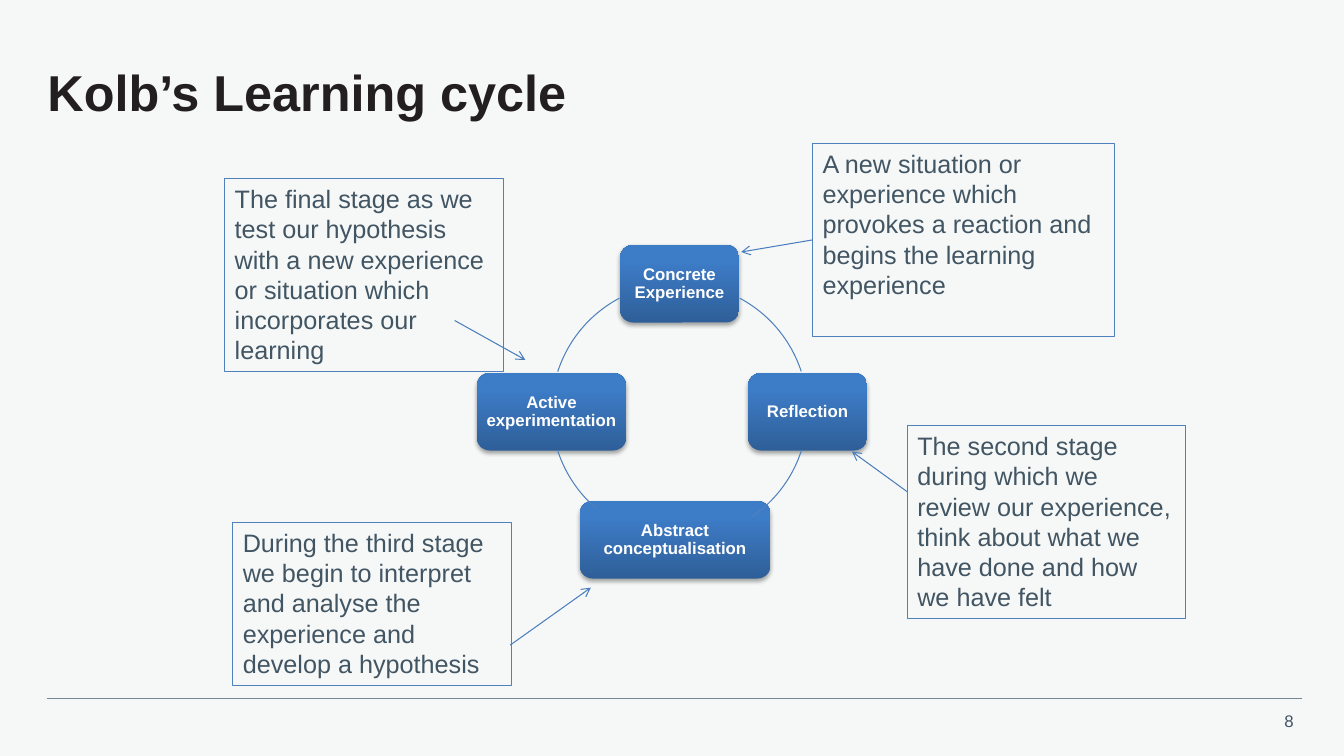
from lxml.etree import SubElement
from pptx import Presentation
from pptx.dml.color import RGBColor
from pptx.enum.shapes import MSO_CONNECTOR, MSO_SHAPE
from pptx.enum.text import MSO_ANCHOR, MSO_AUTO_SIZE, PP_ALIGN
from pptx.oxml.ns import qn
from pptx.util import Inches, Pt

COLORS = {
    "background": "F6F8F8", "title": "231F20", "body": "425563",
    "rule": "768692", "outline": "4F81BD", "arrow": "4B7EBC",
    "stage_dark": "2F5F99", "stage_light": "3D7CC7",
    "white": "FFFFFF", "shadow": "000000",
}

STAGES = [
    ("Concrete Experience", (6.15, 2.43, 1.18, 0.77)),
    ("Reflection", (7.42, 3.7, 1.18, 0.77)),
    ("Abstract conceptualisation", (5.75, 4.97, 1.89, 0.77)),
    ("Active experimentation", (4.73, 3.7, 1.48, 0.77)),
]
ARC_ANGLES = [(298.1, 341.9), (17.8, 55.4), (130.4, 162.3), (198, 242)]

NOTES = [
    ("A new situation or experience which provokes a reaction and begins "
     "the learning experience",
     (8.06, 1.42, 2.99, 1.92), (8.06, 2.38, 7.35, 2.5)),
    ("The final stage as we test our hypothesis with a new experience or "
     "situation which incorporates our learning",
     (2.23, 1.77, 2.76, 1.92), (4.51, 3.18, 5.21, 3.57)),
    ("The second stage during which we review our experience, think about "
     "what we have done and how we have felt",
     (9, 4.22, 2.76, 1.92), (9, 4.88, 8.45, 4.48)),
    ("During the third stage we begin to interpret and analyse the "
     "experience and develop a hypothesis",
     (2.31, 5.18, 2.76, 1.62), (5.06, 6.4, 5.86, 5.83)),
]


def color(name):
    """Return the named palette colour."""
    return RGBColor.from_string(COLORS[name])


def inches(values):
    """Convert numbers to lengths."""
    return [Inches(value) for value in values]


def write(shape, text, size, ink, bold=False, align=PP_ALIGN.LEFT,
          anchor=MSO_ANCHOR.TOP, spacing=1.0, insets=(0.1, 0.05), wrap=True):
    """Put formatted text in a shape."""
    frame = shape.text_frame
    frame.auto_size = MSO_AUTO_SIZE.NONE
    frame.word_wrap = wrap
    frame.vertical_anchor = anchor
    frame.margin_left = frame.margin_right = Inches(insets[0])
    frame.margin_top = frame.margin_bottom = Inches(insets[1])
    para = frame.paragraphs[0]
    para.alignment = align
    para.line_spacing = spacing
    span = para.add_run()
    span.text = text
    span.font.name = "Arial"
    span.font.size = Pt(size)
    span.font.bold = bold
    span.font.color.rgb = color(ink)


def add_line(page, ends, ink, width, arrow=False):
    """Draw a straight line, with an open arrowhead if asked."""
    line = page.shapes.add_connector(MSO_CONNECTOR.STRAIGHT, *inches(ends))
    line.line.color.rgb = color(ink)
    line.line.width = Pt(width)
    if arrow:
        SubElement(line.line._get_or_add_ln(), qn("a:tailEnd"), type="arrow")
    SubElement(line._element.spPr, qn("a:effectLst"))


def add_stage(page, name, box):
    """Draw one raised stage of the cycle."""
    stage = page.shapes.add_shape(MSO_SHAPE.ROUNDED_RECTANGLE, *inches(box))
    stage.fill.gradient()
    stage.fill.gradient_angle = 90
    stops = stage.fill.gradient_stops
    for stop, position, ink in zip(stops, (0, 0.8), ("stage_dark", "stage_light")):
        stop.position = position
        stop.color.rgb = color(ink)
    stage.line.fill.background()
    stage.shadow.inherit = False
    effects = stage._element.spPr.find(qn("a:effectLst"))
    shadow = SubElement(effects, qn("a:outerShdw"), blurRad="40000",
                        dist="23000", dir="5400000", rotWithShape="0")
    tint = SubElement(shadow, qn("a:srgbClr"), val=COLORS["shadow"])
    SubElement(tint, qn("a:alpha"), val="35000")
    write(stage, name, 12, "white", bold=True, align=PP_ALIGN.CENTER,
          anchor=MSO_ANCHOR.MIDDLE, spacing=0.9, insets=(0.04, 0.05))


def add_cycle(page, box):
    """Draw the four stages and the arcs of the circle in the box."""
    for name, stage_box in STAGES:
        add_stage(page, name, stage_box)
    for angles in ARC_ANGLES:
        arc = page.shapes.add_shape(MSO_SHAPE.ARC, *inches(box))
        for index, degrees in enumerate(angles):
            arc.adjustments[index] = degrees * 0.6
        arc.fill.background()
        arc.line.color.rgb = color("outline")
        arc.line.width = Pt(0.75)
        arc.shadow.inherit = False


def add_note(page, text, box, pointer):
    """Draw an outlined explanation and its arrow."""
    note = page.shapes.add_shape(MSO_SHAPE.RECTANGLE, *inches(box))
    note.fill.background()
    note.line.color.rgb = color("outline")
    note.line.width = Pt(0.75)
    note.shadow.inherit = False
    write(note, text, 18, "body")
    add_line(page, pointer, "arrow", 0.75, arrow=True)


def add_title(page, text, box):
    """Place the title in its placeholder."""
    title = page.shapes.title
    title.left, title.top, title.width, title.height = inches(box)
    write(title, text, 36, "title", bold=True, anchor=MSO_ANCHOR.MIDDLE,
          spacing=0.9, insets=(0, 0))


def add_footer(page, number, box):
    """Draw the rule and the page number under it."""
    left, top, width, height = box
    add_line(page, (left, top, left + width, top), "rule", 0.5)
    label = page.shapes.add_textbox(
        *inches((left + width - 0.39, top + 0.07, 0.41, height - 0.07)))
    write(label, number, 12, "body", align=PP_ALIGN.RIGHT, wrap=False)


def main():
    """Build the slide and save it."""
    deck = Presentation()
    deck.slide_width, deck.slide_height = inches((13.33, 7.5))
    page = deck.slides.add_slide(deck.slide_layouts[5])
    page.background.fill.solid()
    page.background.fill.fore_color.rgb = color("background")
    add_footer(page, "8", (0.47, 6.93, 12.44, 0.37))
    add_title(page, "Kolb’s Learning cycle", (0.47, 0.47, 12.47, 0.95))
    add_cycle(page, (5.47, 2.81, 2.54, 2.54))
    for text, box, pointer in NOTES:
        add_note(page, text, box, pointer)
    deck.save("out.pptx")


if __name__ == "__main__":
    main()
